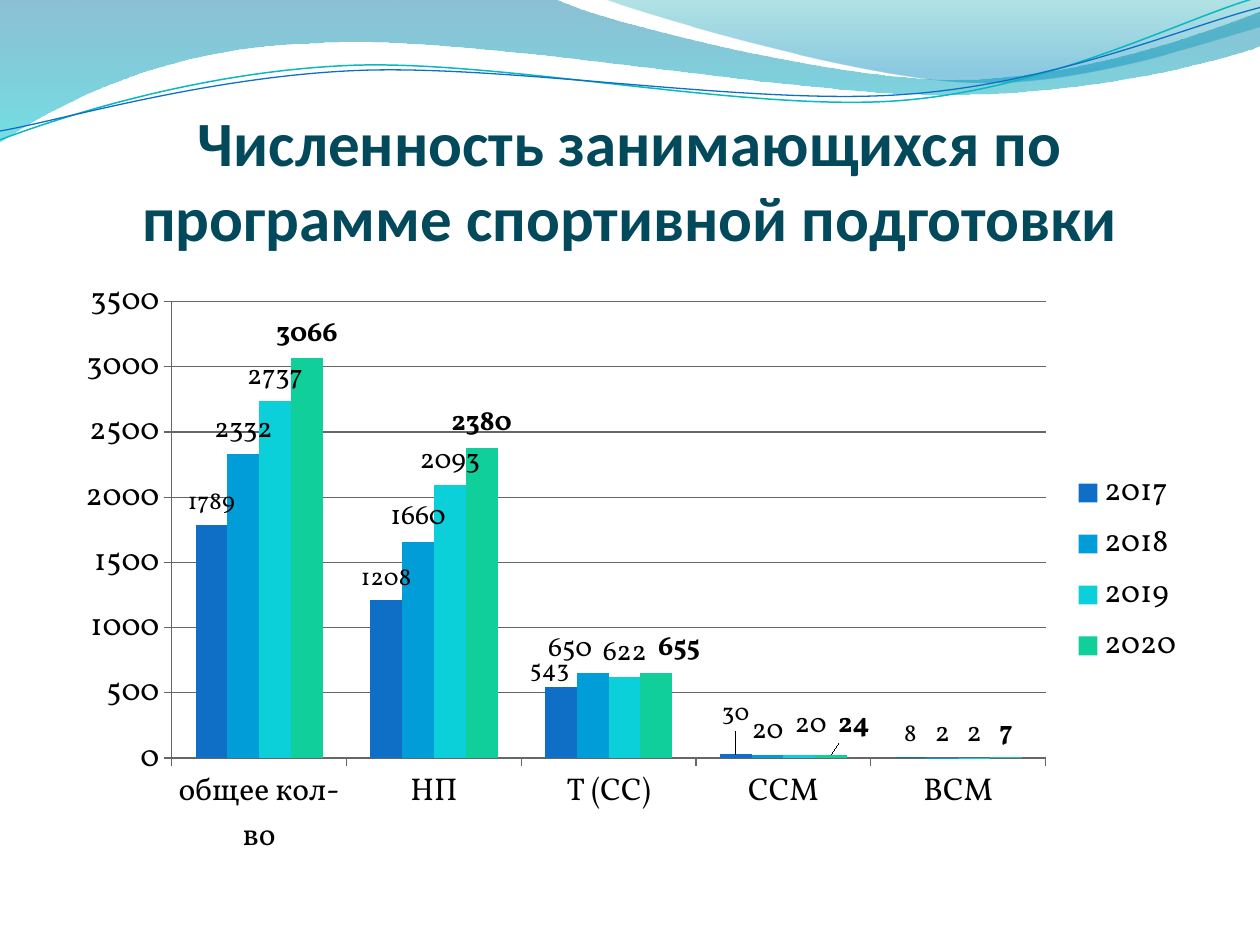
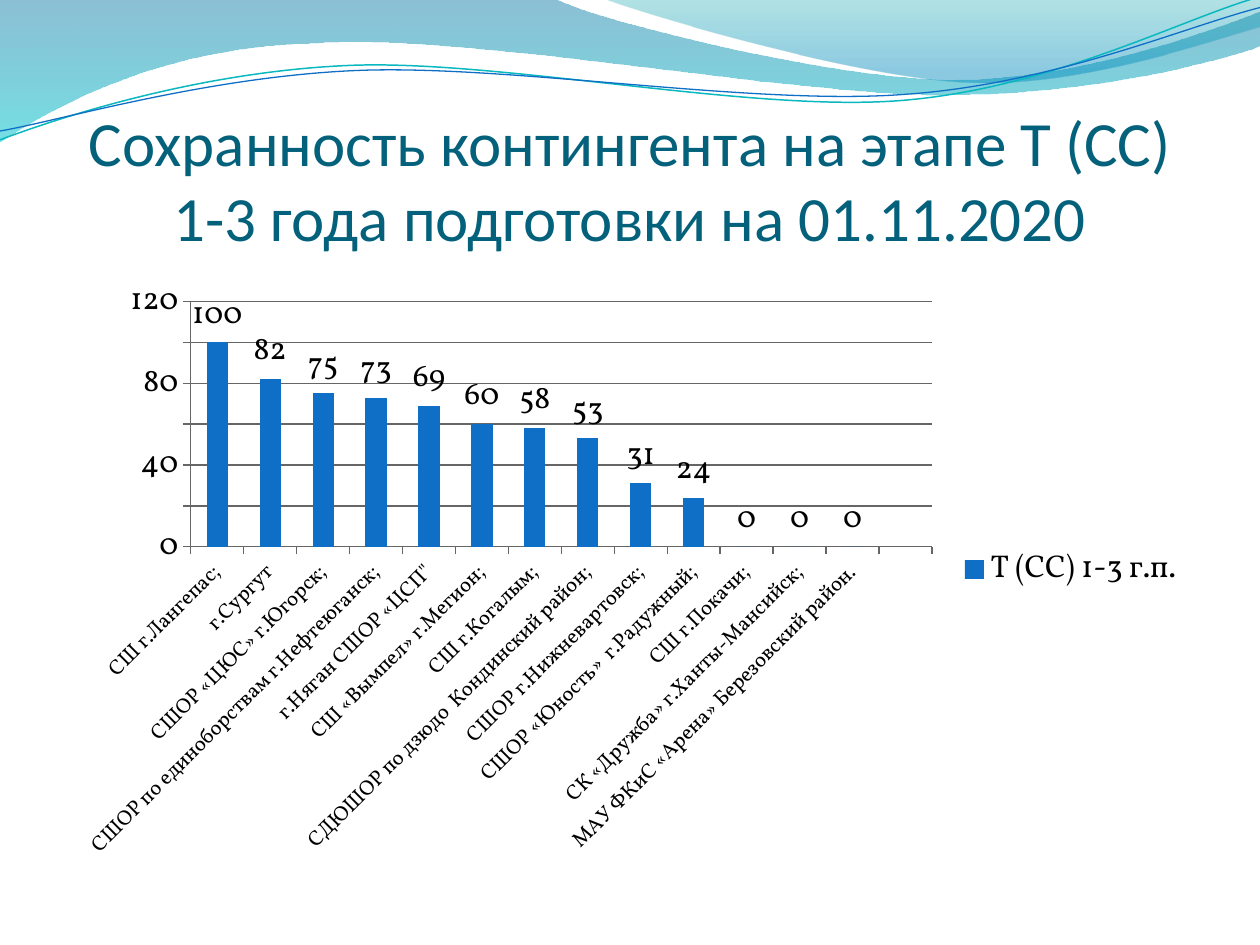
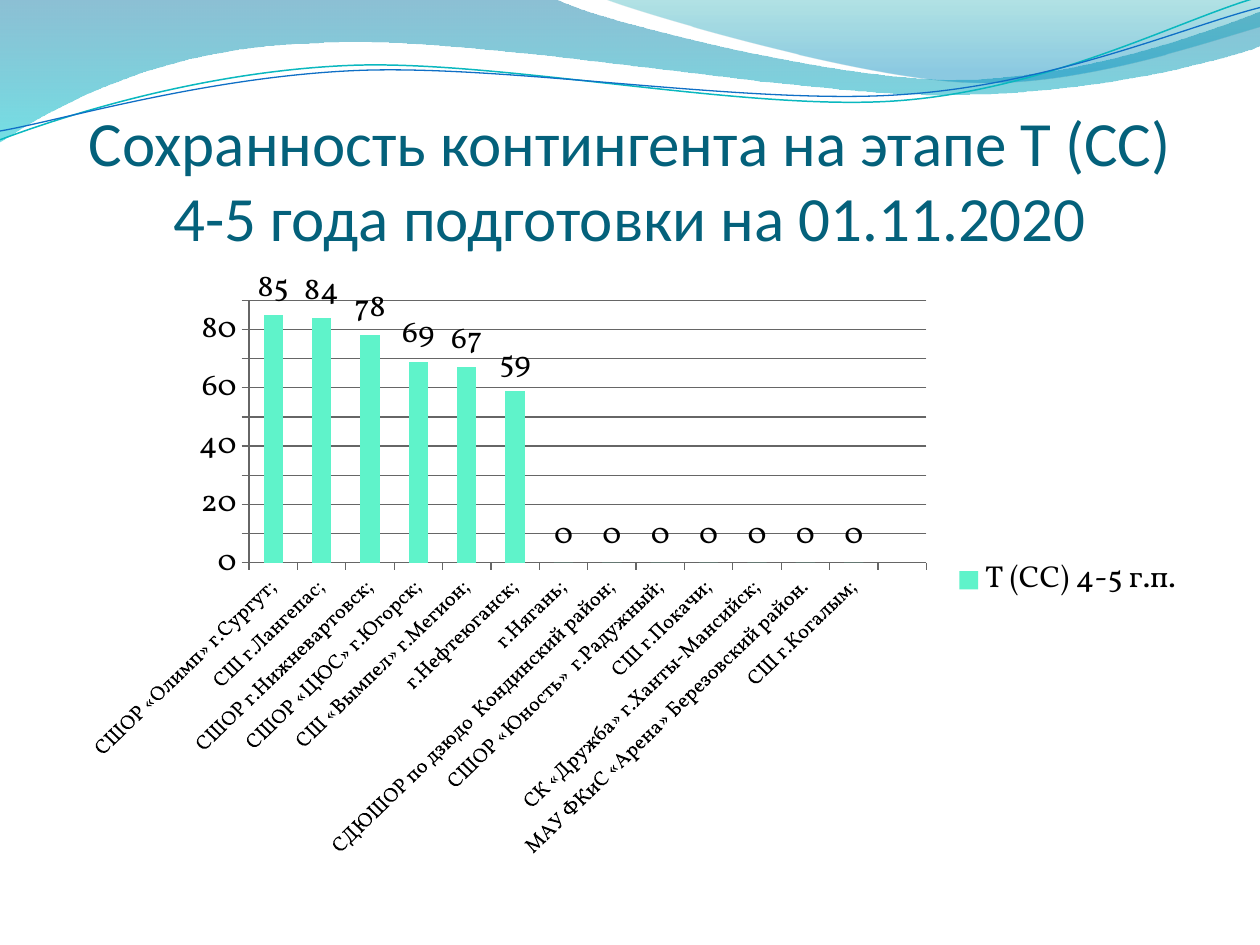
from lxml import etree
from pptx import Presentation
from pptx import util as u
from pptx.chart.data import CategoryChartData
from pptx.dml.color import RGBColor
from pptx.enum import chart as ch, text
from pptx.oxml import parse_xml
from pptx.oxml.ns import qn

COLORS = {
    "title": "04617B", "title_dark": "03495C", "text": "000000", "grid": "666666",
    "blue": "0F6FC6", "sky": "009DD9", "cyan": "0BD0D9", "green": "10CF9B",
    "mint": "5FF3CA", "teal_line": "0AB8BF",
    "wave_top": "0074A1", "wave_bottom": "00C6CF",
    "crest_top": "00A1A9", "crest_bottom": "008BBF",
}
TITLE_FONT, CHART_FONT = "Calibri", "Vollkorn"

# Paths: a start point, then one point per line or three per Bézier curve
WAVE = [
    (0, 0), [(4.4, -0.01)],
    [(4.76, 0.17), (6.64, 0.63), (7.58, 0.63)], [(8.53, 0.63), (9.58, 0.26), (10, 0.09)],
    [(10.01, 0.36)],
    [(9.83, 0.44), (8.7, 0.76), (7.46, 0.75)], [(6.22, 0.75), (3.82, 0.28), (2.57, 0.34)],
    [(1.29, 0.36), (0.46, 0.83), (-0.01, 1.13)], [(0, 0)],
]
CREST = [
    (4.79, -0.01), [(5.09, 0.11), (6.82, 0.62), (7.69, 0.65)],
    [(8.56, 0.69), (9.61, 0.32), (10, 0.21)], [(10, 0)], [(4.79, -0.01)],
]
TEAL_CURVE = [
    (0, 1.11), [(0.48, 0.93), (1.58, 0.57), (2.77, 0.52)],
    [(3.95, 0.47), (5.93, 0.89), (7.13, 0.8)], [(8.33, 0.71), (9.38, 0.15), (9.98, -0.02)],
]
BLUE_CURVE = [
    (0, 1.04), [(0.47, 0.96), (1.64, 0.61), (2.83, 0.56)],
    [(4.03, 0.51), (5.97, 0.84), (7.17, 0.75)], [(8.36, 0.67), (9.41, 0.21), (10, 0.06)],
]

NO_LEADER_LINES = (
    '<c:extLst xmlns:c="http://schemas.openxmlformats.org/drawingml/2006/chart">'
    '<c:ext uri="{CE6537A1-D6FC-4f65-9D91-7224C49458BB}"'
    ' xmlns:c15="http://schemas.microsoft.com/office/drawing/2012/chart">'
    '<c15:showLeaderLines val="0"/></c:ext></c:extLst>')


def rgb(name):
    return RGBColor.from_string(COLORS[name])


class Deck:
    def __init__(self):
        self.presentation = Presentation()
        self.presentation.slide_width = u.Inches(10)
        self.presentation.slide_height = u.Inches(7.5)
        self.slide = None

    def new_slide(self, title, color="title", bold=False):
        self.slide = self.presentation.slides.add_slide(self.presentation.slide_layouts[6])
        self.wave(WAVE, [(0, "wave_top", 45), (1, "wave_bottom", 55)])
        self.wave(CREST, [(0, "crest_top", 30), (0.8, "crest_bottom", 45)])
        self.curve(TEAL_CURVE, "teal_line", 0.85)
        self.curve(BLUE_CURVE, "blue", 0.75)
        self.title(title, color, bold)

    def style_font(self, font, size, color="text", name=CHART_FONT, bold=False):
        font.size, font.name, font.bold = u.Pt(size), name, bold
        font.color.rgb = rgb(color)

    def outline(self, path, close):
        start, *segments = path
        points = [(u.Inches(x), u.Inches(y))
                  for x, y in [start, *(point for segment in segments for point in segment)]]
        builder = self.slide.shapes.build_freeform(*points[0], scale=1.0)
        builder.add_line_segments(points[1:], close=close)
        shape = builder.convert_to_shape()
        shape.shadow.inherit = False

        # Join each three points of a curve into one Bézier element
        lines = iter(list(shape._element.iter(qn("a:lnTo"))))
        for segment in segments:
            line = next(lines)
            if len(segment) == 3:
                line.tag = qn("a:cubicBezTo")
                for _ in range(2):
                    control = next(lines)
                    line.append(control[0])
                    control.getparent().remove(control)
        return shape

    def wave(self, path, stops):
        shape = self.outline(path, close=True)
        shape.line.fill.background()
        shape.fill.gradient()
        shape.fill.gradient_angle = 270
        for stop, (position, color, _) in zip(shape.fill.gradient_stops, stops):
            stop.position = position
            stop.color.rgb = rgb(color)
        for element, (_, _, opacity) in zip(shape._element.iter(qn("a:srgbClr")), stops):
            etree.SubElement(element, qn("a:alpha"), val=str(opacity * 1000))

    def curve(self, path, color, width):
        shape = self.outline(path, close=False)
        shape.fill.background()
        shape.line.color.rgb = rgb(color)
        shape.line.width = u.Pt(width)

    def title(self, words, color, bold):
        box = self.slide.shapes.add_textbox(
            u.Inches(0.5), u.Inches(0.77), u.Inches(9), u.Inches(1.25))
        frame = box.text_frame
        frame.word_wrap = True
        frame.vertical_anchor = text.MSO_ANCHOR.BOTTOM
        frame.margin_left = frame.margin_right = frame.margin_bottom = 0
        frame.margin_top = u.Inches(0.05)
        paragraph = frame.paragraphs[0]
        paragraph.alignment = text.PP_ALIGN.CENTER
        run = paragraph.add_run()
        run.text = words
        self.style_font(run.font, 36, color, TITLE_FONT, bold)

    def chart(self, categories, series, maximum, unit, category_size=18):
        data = CategoryChartData()
        data.categories = categories
        for item in series:
            data.add_series(item["name"], item["values"])
        chart = self.slide.shapes.add_chart(
            ch.XL_CHART_TYPE.COLUMN_CLUSTERED, u.Inches(0.5), u.Inches(2.12),
            u.Inches(9), u.Inches(4.8), data).chart
        self.style_font(chart.font, 18)
        chart.has_title = False
        chart.has_legend = True
        chart.legend.position = ch.XL_LEGEND_POSITION.RIGHT
        chart.legend.include_in_layout = False

        # Axes
        for axis in (chart.category_axis, chart.value_axis):
            axis.major_tick_mark = ch.XL_TICK_MARK.OUTSIDE
            self.axis_line(axis.format.line)
        self.style_font(chart.category_axis.tick_labels.font, category_size)
        chart.value_axis.minimum_scale = 0
        chart.value_axis.maximum_scale = maximum
        chart.value_axis.major_unit = unit
        chart.value_axis.has_major_gridlines = True
        self.axis_line(chart.value_axis.major_gridlines.format.line)

        # Columns
        plot = chart.plots[0]
        plot.gap_width, plot.overlap = 150, 0
        plot.vary_by_categories = False
        for columns, item in zip(plot.series, series):
            columns.format.fill.solid()
            columns.format.fill.fore_color.rgb = rgb(item["color"])
            self.value_labels(columns, item)

    def axis_line(self, line):
        line.color.rgb = rgb("grid")
        line.width = u.Pt(0.75)

    def value_labels(self, columns, item):
        size, bold = item.get("size", 18), item.get("bold", False)
        labels = columns.data_labels
        labels.show_value = True
        labels.position = ch.XL_LABEL_POSITION.OUTSIDE_END
        self.style_font(labels.font, size, bold=bold)
        shifts = item.get("shifts", {})
        for index in shifts:
            label = columns.points[index].data_label
            self.style_font(label.font, size, bold=bold)
            label.position = ch.XL_LABEL_POSITION.OUTSIDE_END
        for element in labels._element.findall(qn("c:dLbl")):
            index = element.find(qn("c:idx"))
            layout = etree.Element(qn("c:layout"))
            manual = etree.SubElement(layout, qn("c:manualLayout"))
            for axis, shift in zip("xy", shifts[int(index.get("val"))]):
                etree.SubElement(manual, qn(f"c:{axis}"), val=str(shift))
            index.addnext(layout)
        labels._element.append(parse_xml(NO_LEADER_LINES))


def main():
    deck = Deck()

    # Trainees by stage and year
    deck.new_slide("Численность занимающихся по программе спортивной подготовки",
                   "title_dark", bold=True)
    deck.chart(
        ["общее кол-во", "НП", "Т (СС)", "ССМ", "ВСМ"],
        [
            {"name": "2017", "values": [1789, 1208, 543, 30, 8], "color": "blue",
             "size": 14, "shifts": {2: (-0.01, 0.01), 3: (0, -0.03)}},
            {"name": "2018", "values": [2332, 1660, 650, 20, 2], "color": "sky",
             "size": 16, "shifts": {2: (-0.02, 0)}},
            {"name": "2019", "values": [2737, 2093, 622, 20, 2], "color": "cyan",
             "size": 16, "shifts": {3: (0.01, -0.01)}},
            {"name": "2020", "values": [3066, 2380, 655, 24, 7], "color": "green",
             "size": 16, "bold": True, "shifts": {2: (0.02, 0), 3: (0.02, -0.01)}},
        ],
        maximum=3500, unit=500)

    # Retention, years 1-3
    retention = "Сохранность контингента на этапе Т (СС) {} года подготовки на 01.11.2020"
    deck.new_slide(retention.format("1-3"))
    deck.chart(
        ["СШ г.Лангепас;", " г.Сургут", "СШОР «ЦЮС» г.Югорск;",
         "СШОР по единоборствам г.Нефтеюганск;", "г.Няган СШОР «ЦСП\"",
         "СШ «Вымпел» г.Мегион;", "СШ г.Когалым;", "СДЮШОР по дзюдо  Кондинский район;",
         "СШОР г.Нижневартовск;", "СШОР «Юность»  г.Радужный;", "СШ г.Покачи;",
         "СК «Дружба» г.Ханты-Мансийск;", "МАУ ФКиС «Арена» Березовский район.", ""],
        [{"name": "Т (СС) 1-3 г.п.", "color": "blue",
          "values": [100, 82, 75, 73, 69, 60, 58, 53, 31, 24, 0, 0, 0, None]}],
        maximum=120, unit=20, category_size=12)

    # Retention, years 4-5
    deck.new_slide(retention.format("4-5"))
    deck.chart(
        [" СШОР «Олимп» г.Сургут;", "СШ г.Лангепас;", "СШОР г.Нижневартовск;",
         "СШОР «ЦЮС» г.Югорск;", "СШ «Вымпел» г.Мегион;", " г.Нефтеюганск;", " г.Нягань;",
         "СДЮШОР по дзюдо  Кондинский район;", "СШОР «Юность»  г.Радужный;",
         "СШ г.Покачи;", "СК «Дружба» г.Ханты-Мансийск;",
         "МАУ ФКиС «Арена» Березовский район.", "СШ г.Когалым;", ""],
        [{"name": "Т (СС) 4-5 г.п.", "color": "mint",
          "values": [85, 84, 78, 69, 67, 59, 0, 0, 0, 0, 0, 0, 0, None]}],
        maximum=90, unit=10, category_size=12)

    deck.presentation.save("out.pptx")


if __name__ == "__main__":
    main()
